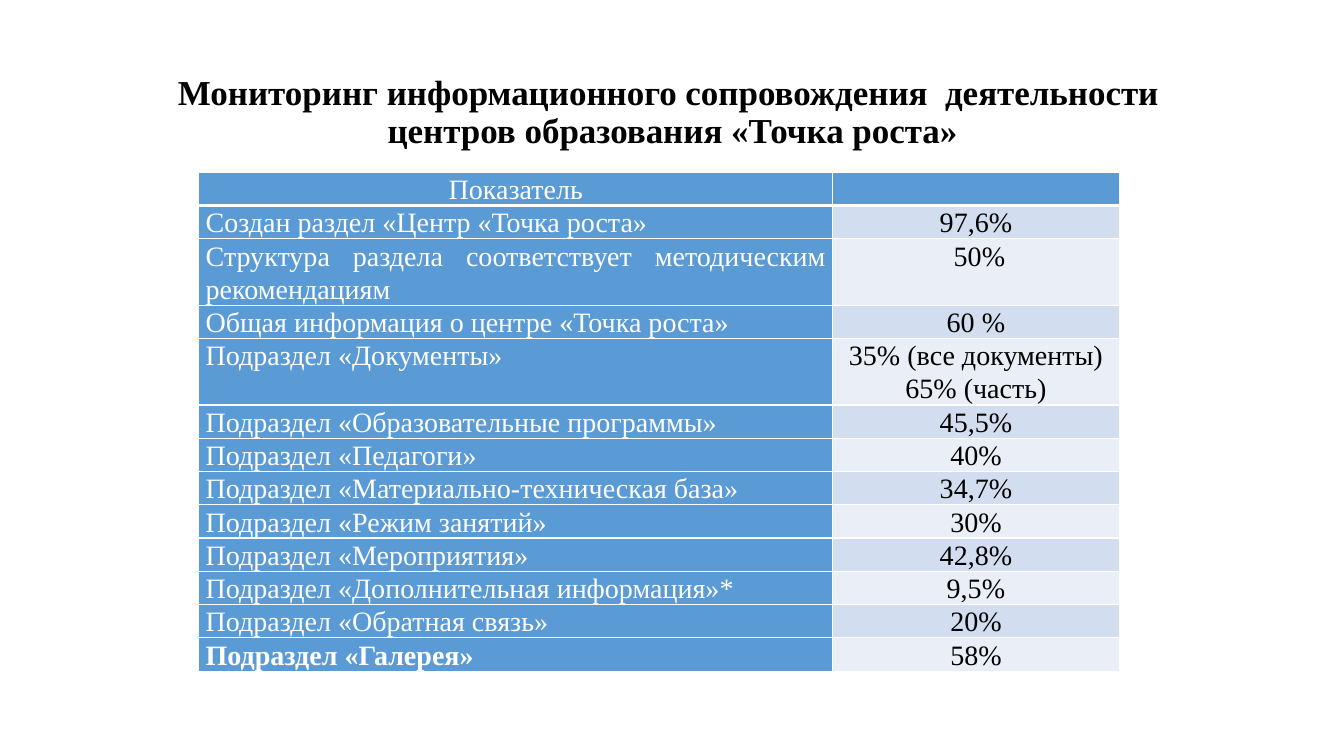
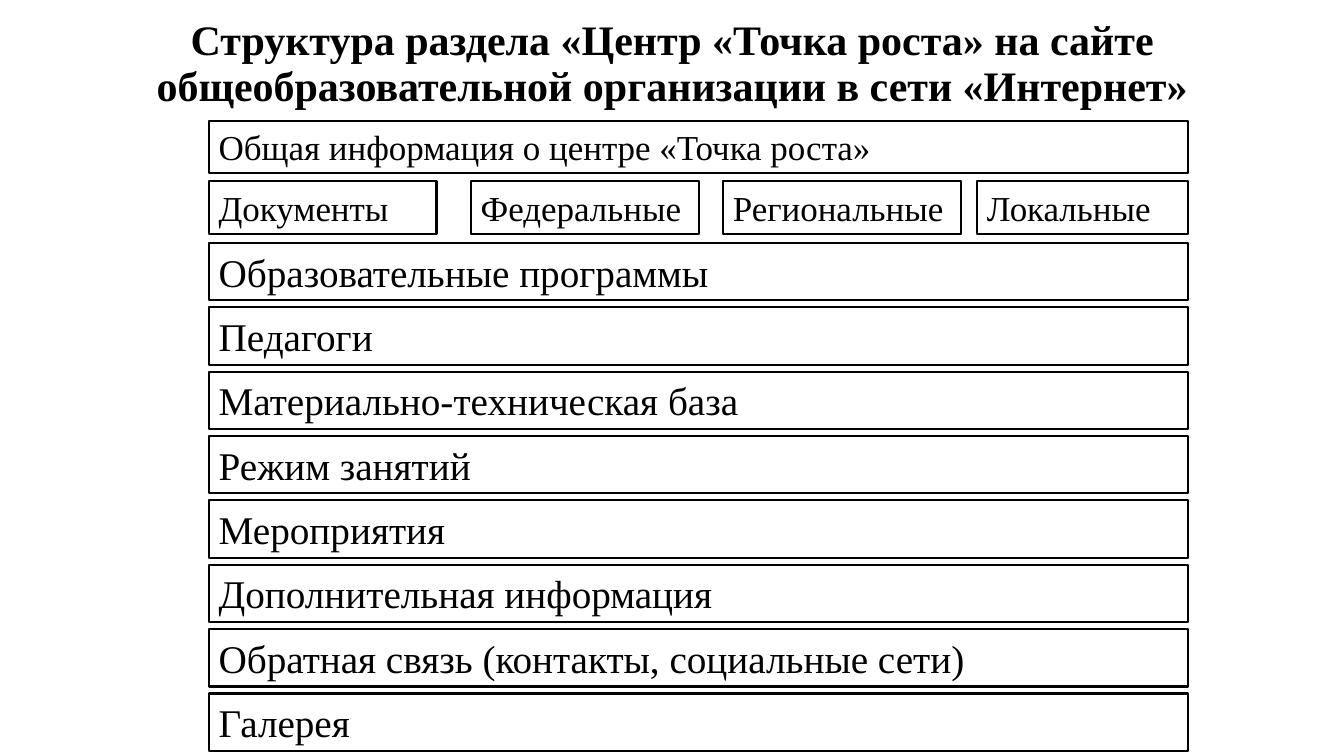
import dataclasses

import pptx
import pptx.dml.color
import pptx.enum.shapes
import pptx.enum.text
import pptx.oxml
import pptx.oxml.ns
import pptx.util

Inches = pptx.util.Inches
Pt = pptx.util.Pt
ALIGN = pptx.enum.text.PP_ALIGN


@dataclasses.dataclass(frozen=True)
class Theme:
    font: str = "Times New Roman"
    ink: str = "000000"
    paper: str = "FFFFFF"
    accent: str = "5B9BD5"
    bands: tuple = ("D2DEEF", "EAEFF7")
    monitoring_title: int = 25
    structure_title: int = 30
    table_text: int = 20
    section_text: int = 28
    document_text: int = 25
    outline: float = 1.5
    grid: int = 1
    header_rule: int = 3


@dataclasses.dataclass(frozen=True)
class Box:
    left: float
    top: float
    width: float
    height: float

    def lengths(self):
        return [Inches(side) for side in dataclasses.astuple(self)]


THEME = Theme()

INDICATORS = [
    ("Создан раздел «Центр «Точка роста»", "97,6%"),
    ("Структура раздела соответствует методическим рекомендациям", " 50%"),
    ("Общая информация о центре «Точка роста»", "60 %"),
    ("Подраздел «Документы»", "35% (все документы)\n65% (часть)"),
    ("Подраздел «Образовательные программы»", "45,5%"),
    ("Подраздел «Педагоги»", "40%"),
    ("Подраздел «Материально-техническая база»", "34,7%"),
    ("Подраздел «Режим занятий»", "30%"),
    ("Подраздел «Мероприятия»", "42,8%"),
    ("Подраздел «Дополнительная информация»*", "9,5%"),
    ("Подраздел «Обратная связь»", "20%"),
    ("Подраздел «Галерея»", "58%"),
]
BOLD_INDICATOR = "Подраздел «Галерея»"

# Each document group: name, offset from the left edge, width
DOCUMENT_GROUPS = [
    ("Документы", 0, 2.26),
    ("Федеральные", 2.6, 2.26),
    ("Региональные", 5.1, 2.36),
    ("Локальные", 7.62, 2.09),
]
SECTIONS = [
    "Образовательные программы",
    "Педагоги",
    "Материально-техническая база",
    "Режим занятий",
    "Мероприятия",
    "Дополнительная информация",
    "Обратная связь (контакты, социальные сети)",
    "Галерея",
]


def rgb(color):
    return pptx.dml.color.RGBColor.from_string(color)


def format_text(frame, size, color=THEME.ink, align=ALIGN.LEFT, bold=False, spacing=1.0):
    for paragraph in frame.paragraphs:
        paragraph.alignment = align
        paragraph.line_spacing = spacing
        paragraph.font.name = THEME.font
        paragraph.font.size = Pt(size)
        paragraph.font.bold = bold
        paragraph.font.color.rgb = rgb(color)


def add_titled_slide(deck, text, size, box):
    slide = deck.slides.add_slide(deck.slide_layouts.get_by_name("Title Only"))
    title = slide.shapes.title
    title.left, title.top, title.width, title.height = box.lengths()
    frame = title.text_frame
    frame.text = text
    frame.word_wrap = True
    frame.auto_size = pptx.enum.text.MSO_AUTO_SIZE.NONE
    frame.vertical_anchor = pptx.enum.text.MSO_ANCHOR.MIDDLE
    format_text(frame, size, align=ALIGN.CENTER, bold=True, spacing=0.9)
    return slide


def set_borders(cell, top, bottom):
    """Draw the white grid; top and bottom are widths in points."""
    widths = {"lnL": THEME.grid, "lnR": THEME.grid, "lnT": top, "lnB": bottom}
    properties = cell._tc.get_or_add_tcPr()
    for edge, width in widths.items():
        properties.append(pptx.oxml.parse_xml(
            f'<a:{edge} {pptx.oxml.ns.nsdecls("a")} w="{Pt(width)}"><a:solidFill>'
            f'<a:srgbClr val="{THEME.paper}"/></a:solidFill></a:{edge}>'))


def fill_cell(cell, text, fill, color, align, bold=False, top=THEME.grid, bottom=THEME.grid):
    set_borders(cell, top, bottom)
    cell.fill.solid()
    cell.fill.fore_color.rgb = rgb(fill)
    cell.margin_left = cell.margin_right = Inches(0.07)
    cell.margin_top = cell.margin_bottom = 0
    cell.text = text
    format_text(cell.text_frame, THEME.table_text, color, align, bold, spacing=1.07)


def add_indicator_table(slide, box):
    line_height = 0.33
    table = slide.shapes.add_table(len(INDICATORS) + 1, 2, *box.lengths()).table
    table.first_row = table.horz_banding = False
    value_width = 2.84
    table.columns[0].width = Inches(box.width - value_width)
    table.columns[1].width = Inches(value_width)

    for row in table.rows:
        row.height = Inches(line_height)
    for column, heading in enumerate(("Показатель", "")):
        fill_cell(table.cell(0, column), heading, THEME.accent, THEME.paper,
                  ALIGN.CENTER, bottom=THEME.header_rule)
    for index, (indicator, share) in enumerate(INDICATORS):
        top = THEME.grid if index else THEME.header_rule
        fill_cell(table.cell(index + 1, 0), indicator, THEME.accent, THEME.paper,
                  ALIGN.JUSTIFY, indicator == BOLD_INDICATOR, top)
        fill_cell(table.cell(index + 1, 1), share, THEME.bands[index % 2], THEME.ink,
                  ALIGN.CENTER, top=top)


def add_section(slide, text, size, box):
    section = slide.shapes.add_shape(
        pptx.enum.shapes.MSO_SHAPE.RECTANGLE, *box.lengths())
    section.shadow.inherit = False
    section.fill.background()
    section.line.color.rgb = rgb(THEME.ink)
    section.line.width = Pt(THEME.outline)
    frame = section.text_frame
    frame.text = text
    frame.word_wrap = True
    frame.auto_size = pptx.enum.text.MSO_AUTO_SIZE.SHAPE_TO_FIT_TEXT
    frame.vertical_anchor = pptx.enum.text.MSO_ANCHOR.TOP
    format_text(frame, size)


def add_site_structure(slide, box):
    """Stack the overview, the row of document groups and the other sections."""
    small_height, large_height = 0.52, 0.57
    add_section(slide, "Общая информация о центре «Точка роста»", THEME.document_text,
                Box(box.left, box.top, box.width, small_height))
    for group, offset, width in DOCUMENT_GROUPS:
        add_section(slide, group, THEME.document_text,
                    Box(box.left + offset, box.top + 0.6, width, small_height))
    first_top = box.top + 1.21
    pitch = (box.top + box.height - large_height - first_top) / (len(SECTIONS) - 1)
    for index, name in enumerate(SECTIONS):
        add_section(slide, name, THEME.section_text,
                    Box(box.left, first_top + index * pitch, box.width, large_height))


def main():
    deck = pptx.Presentation()
    deck.slide_width, deck.slide_height = Inches(13.33), Inches(7.5)

    monitoring = add_titled_slide(
        deck,
        "Мониторинг информационного сопровождения  деятельности \v"
        "центров образования «Точка роста»",
        THEME.monitoring_title, Box(0.92, 0.4, 11.5, 1.45))
    add_indicator_table(monitoring, Box(1.97, 1.71, 9.13, 4.95))

    structure = add_titled_slide(
        deck,
        "Структура раздела «Центр «Точка роста» на сайте "
        "общеобразовательной организации в сети «Интернет»",
        THEME.structure_title, Box(0.92, 0.09, 11.5, 1.11))
    add_site_structure(structure, Box(2.07, 1.2, 9.71, 6.25))

    deck.save("out.pptx")


if __name__ == "__main__":
    main()
